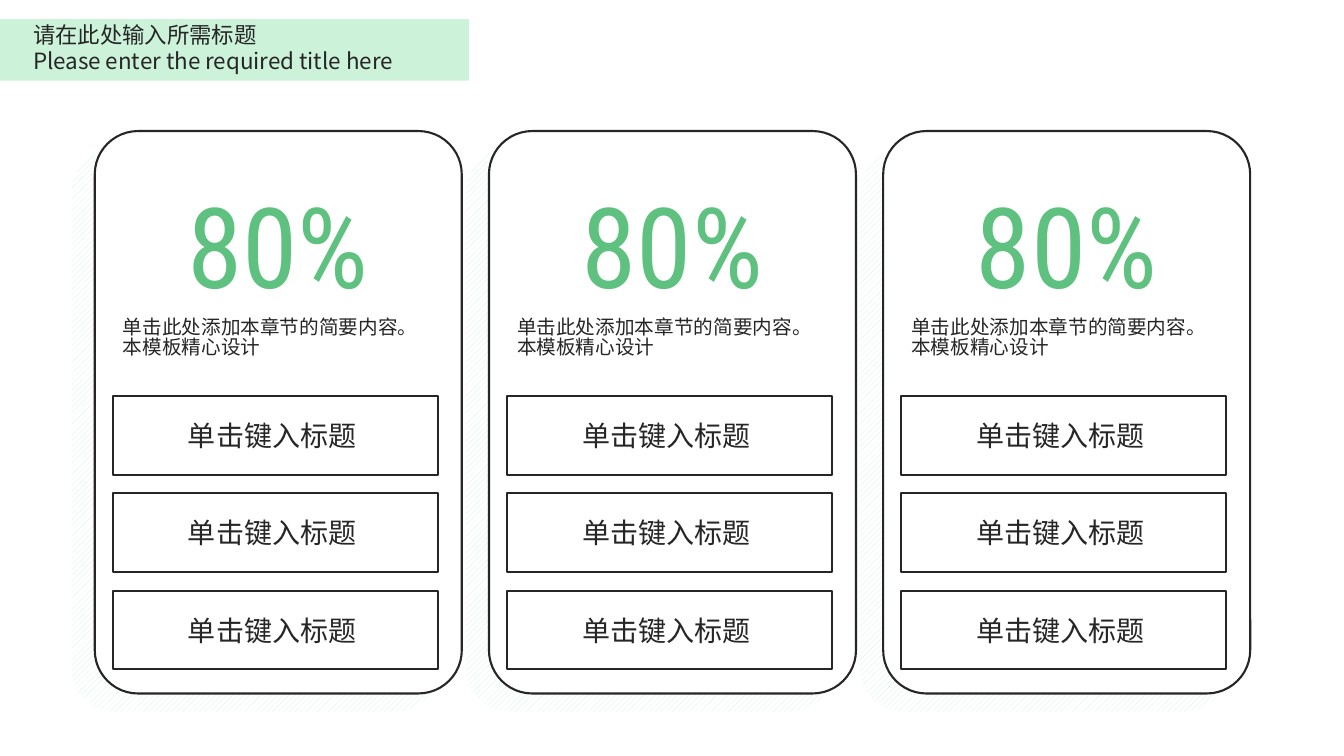
from lxml.etree import SubElement
from pptx import Presentation
from pptx.dml.color import RGBColor
from pptx.enum.dml import MSO_PATTERN as PATTERN
from pptx.enum.shapes import MSO_SHAPE as SHAPE
from pptx.enum.text import MSO_ANCHOR as ANCHOR, MSO_AUTO_SIZE as AUTO, PP_ALIGN as ALIGN
from pptx.oxml.ns import qn
from pptx.util import Inches, Pt

INK, MINT, GREEN, WHITE = "262626", "CCF2DA", "5FC17F", "FFFFFF"
CJK, NUMERALS = "Noto Sans CJK SC", "Roboto Condensed"

# Card grid, in inches
CARD_LEFT, CARD_TOP, CARD_W, CARD_H = 0.94, 1.3, 3.64, 5.58
CARD_PITCH, ROW_PITCH = 3.91, 0.965
INSET, INNER_W, ROW_H = 0.18, 3.22, 0.78

CARDS = [("80%", "单击此处添加本章节的简要内容。本模板精心设计", ["单击键入标题"] * 3)] * 3


def color(value):
    return RGBColor.from_string(value)


def write(sp, text, size, font=CJK, fill=INK, align=ALIGN.LEFT, anchor=ANCHOR.TOP,
          spacing=1.0, right=0.1):
    tf = sp.text_frame
    tf.word_wrap = True
    tf.auto_size = AUTO.NONE
    tf.vertical_anchor = anchor
    tf.margin_left, tf.margin_right = Inches(0.1), Inches(right)
    tf.margin_top = tf.margin_bottom = Inches(0.05)
    p = tf.paragraphs[0]
    p.alignment = align
    p.line_spacing = spacing
    r = p.add_run()
    r.text = text
    r.font.size = Pt(size)
    r.font.color.rgb = color(fill)
    r.font.name = font
    SubElement(r.font._element, qn("a:ea")).set("typeface", font)


def add_text(s, box, text, size, **fmt):
    sp = s.shapes.add_textbox(*map(Inches, box))
    write(sp, text, size, **fmt)


def add_box(s, kind, box, fill=None, line=None):
    sp = s.shapes.add_shape(kind, *map(Inches, box))
    sp.shadow.inherit = False
    if kind == SHAPE.ROUNDED_RECTANGLE:
        sp.adjustments[0] = 0.118
    if fill:
        sp.fill.solid()
        sp.fill.fore_color.rgb = color(fill)
    else:
        sp.fill.background()
    if line:
        sp.line.color.rgb = color(line)
        sp.line.width = Pt(1.5)
    else:
        sp.line.fill.background()
    return sp


def add_header(s, x, y, w, h):
    band = add_box(s, SHAPE.RECTANGLE, (x, y, w, h), fill=MINT)
    # Keep the band behind the title placeholder
    s.shapes._spTree.insert(2, band._element)
    title = s.shapes.title
    title.left, title.top, title.width, title.height = map(Inches, (x + 0.24, y, 3.83, 0.39))
    write(title, "请在此处输入所需标题", 16, spacing=0.9)
    add_text(s, (x + 0.24, y + 0.26, 4.33, 0.39), "Please enter the required title here", 16,
             spacing=0.9)


def add_card(s, x, y, w, h, figure, summary, labels):
    # Hatched backing, offset down and left
    hatch = add_box(s, SHAPE.ROUNDED_RECTANGLE, (x - 0.23, y + 0.18, w, h))
    hatch.fill.patterned()
    hatch.fill.pattern = PATTERN.WIDE_UPWARD_DIAGONAL
    hatch.fill.fore_color.rgb = color(MINT)
    hatch.fill.back_color.rgb = color(WHITE)
    add_box(s, SHAPE.ROUNDED_RECTANGLE, (x, y, w, h), fill=WHITE, line=INK)

    # Figure and summary
    add_text(s, (x + 0.48, y + 0.4, 2.68, 1.44), figure, 80, font=NUMERALS, fill=GREEN,
             align=ALIGN.CENTER)
    add_text(s, (x + INSET, y + 1.81, INNER_W, 0.6), summary, 14, spacing=0.85)

    # Stacked label boxes
    for row, label in enumerate(labels):
        box = (x + INSET, y + 2.63 + row * ROW_PITCH, INNER_W, ROW_H)
        sp = add_box(s, SHAPE.RECTANGLE, box, line=INK)
        write(sp, label, 20, align=ALIGN.CENTER, anchor=ANCHOR.MIDDLE, right=0.16)


def main():
    prs = Presentation()
    prs.slide_width, prs.slide_height = Inches(13.33), Inches(7.5)
    s = prs.slides.add_slide(prs.slide_layouts[5])
    add_header(s, -0.01, 0.19, 4.66, 0.61)
    for column, card in enumerate(CARDS):
        add_card(s, CARD_LEFT + column * CARD_PITCH, CARD_TOP, CARD_W, CARD_H, *card)
    prs.save("out.pptx")


if __name__ == "__main__":
    main()
